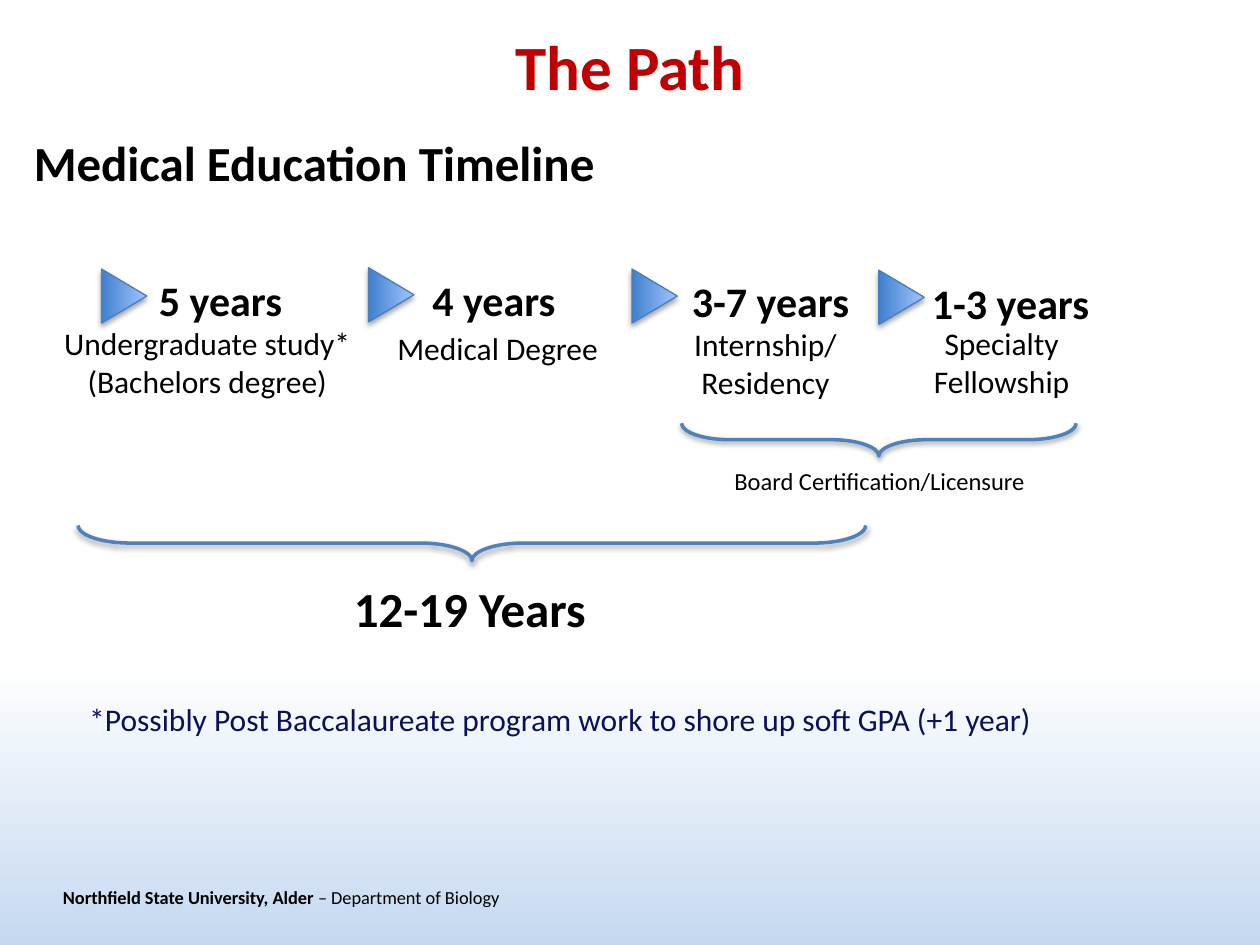
from lxml import etree
from pptx import Presentation
from pptx.dml.color import RGBColor
from pptx.enum.shapes import MSO_SHAPE
from pptx.enum.text import MSO_ANCHOR, PP_ALIGN
from pptx.oxml.ns import qn
from pptx.util import Inches, Pt

TRIANGLE = MSO_SHAPE.ISOSCELES_TRIANGLE
BRACE = MSO_SHAPE.RIGHT_BRACE
LEFT, CENTER = PP_ALIGN.LEFT, PP_ALIGN.CENTER
TOP, MIDDLE = MSO_ANCHOR.TOP, MSO_ANCHOR.MIDDLE


def rgb(value):
    return RGBColor.from_string(value)


class Deck:
    font = "Calibri"
    ink = "000000"

    def __init__(self, width, height):
        self.prs = Presentation()
        self.prs.slide_width = Inches(width)
        self.prs.slide_height = Inches(height)
        self.s = self.prs.slides.add_slide(self.prs.slide_layouts[6])

    def gradient(self, fill, angle, stops):
        fill.gradient()
        fill.gradient_angle = angle
        for stop, (position, color) in zip(fill.gradient_stops, stops):
            stop.position = position
            stop.color.rgb = rgb(color)

    def shadow(self, sp, opacity, distance):
        sp.shadow.inherit = False
        effects = sp._element.spPr.find(qn("a:effectLst"))
        outer = etree.SubElement(
            effects, qn("a:outerShdw"), blurRad=str(Pt(3.1)),
            dist=str(Pt(distance)), dir="5400000", rotWithShape="0")
        color = etree.SubElement(outer, qn("a:srgbClr"), val="000000")
        etree.SubElement(color, qn("a:alpha"), val=str(opacity * 1000))

    def shape(self, kind, box, color, weight):
        sp = self.s.shapes.add_shape(kind, *map(Inches, box))
        sp.rotation = 90
        sp.line.color.rgb = rgb(color)
        sp.line.width = Pt(weight)
        return sp

    def arrow(self, x, y):
        sp = self.shape(TRIANGLE, (x, y, 0.43, 0.36), "4B7EBC", 0.75)
        self.gradient(sp.fill, 90, [(0, "3F80CE"), (1, "A4C4FF")])
        self.shadow(sp, 35, 1.8)

    def brace(self, x, y, width, height):
        box = (x + (width - height) / 2, y - (width - height) / 2, height, width)
        sp = self.shape(BRACE, box, "4F81BD", 2)
        sp.fill.background()
        sp.adjustments[0] = 1.468
        sp.adjustments[1] = 0.5
        self.shadow(sp, 38, 1.6)

    def text(self, box, runs, size, bold=False, color=ink, align=LEFT,
             anchor=TOP, wrap=True, inset=0.1):
        tf = self.s.shapes.add_textbox(*map(Inches, box)).text_frame
        tf.word_wrap = wrap
        tf.vertical_anchor = anchor
        tf.margin_left = tf.margin_right = Inches(inset)
        p = tf.paragraphs[0]
        p.alignment = align
        p.font.name = self.font
        p.font.size = Pt(size)
        p.font.color.rgb = rgb(color)
        if isinstance(runs, str):
            runs = [(runs, bold)]
        for words, heavy in runs:
            r = p.add_run()
            r.text = words
            r.font.bold = heavy

    def stage(self, arrow, years, years_box, label, label_box):
        self.arrow(*arrow)
        self.text((*years_box, 0.5), years, 24, True, align=CENTER)
        self.text(label_box, label, 18, align=CENTER)


def main():
    deck = Deck(10, 7.5)
    deck.gradient(deck.s.background.fill, 270, [(0.7, "FFFFFF"), (1, "C6D9F1")])
    deck.text((0.5, 6.92, 5.17, 0.4),
              [("Northfield State University, Alder ", True),
               ("– Department of Biology", False)],
              10.5, anchor=MIDDLE, inset=0)
    deck.text((0, 0.17, 10, 0.71), "The Path", 36, True, "C00000", CENTER)
    deck.text((0.17, 1, 9.67, 0.57), "Medical Education Timeline", 28, True)

    stages = [
        ((0.77, 2.17), "5 years", (1.12, 2.13, 1.26),
         "Undergraduate study* (Bachelors degree)", (0.37, 2.52, 2.55, 0.71)),
        ((2.89, 2.16), "4 years", (3.29, 2.13, 1.26),
         "Medical Degree", (3.03, 2.56, 1.84, 0.4)),
        ((4.98, 2.17), "3-7 years", (5.36, 2.14, 1.51),
         "Internship/Residency", (5.37, 2.53, 1.41, 0.71)),
        ((6.94, 2.18), "1-3 years", (7.25, 2.15, 1.54),
         "Specialty Fellowship", (7.27, 2.52, 1.36, 0.71)),
    ]
    for stage in stages:
        deck.stage(*stage)

    deck.brace(5.41, 3.36, 3.13, 0.26)
    deck.text((5.73, 3.65, 2.53, 0.34), "Board Certification/Licensure", 14,
              wrap=False)
    deck.brace(0.62, 4.17, 6.25, 0.28)
    deck.text((2.71, 4.54, 2.07, 0.57), "12-19 Years", 28, True, wrap=False)
    deck.text((0.61, 5.51, 8.02, 0.4),
              "*Possibly Post Baccalaureate program work to shore up soft GPA (+1 year)",
              18, color="0A105A")
    deck.prs.save("out.pptx")


if __name__ == "__main__":
    main()
